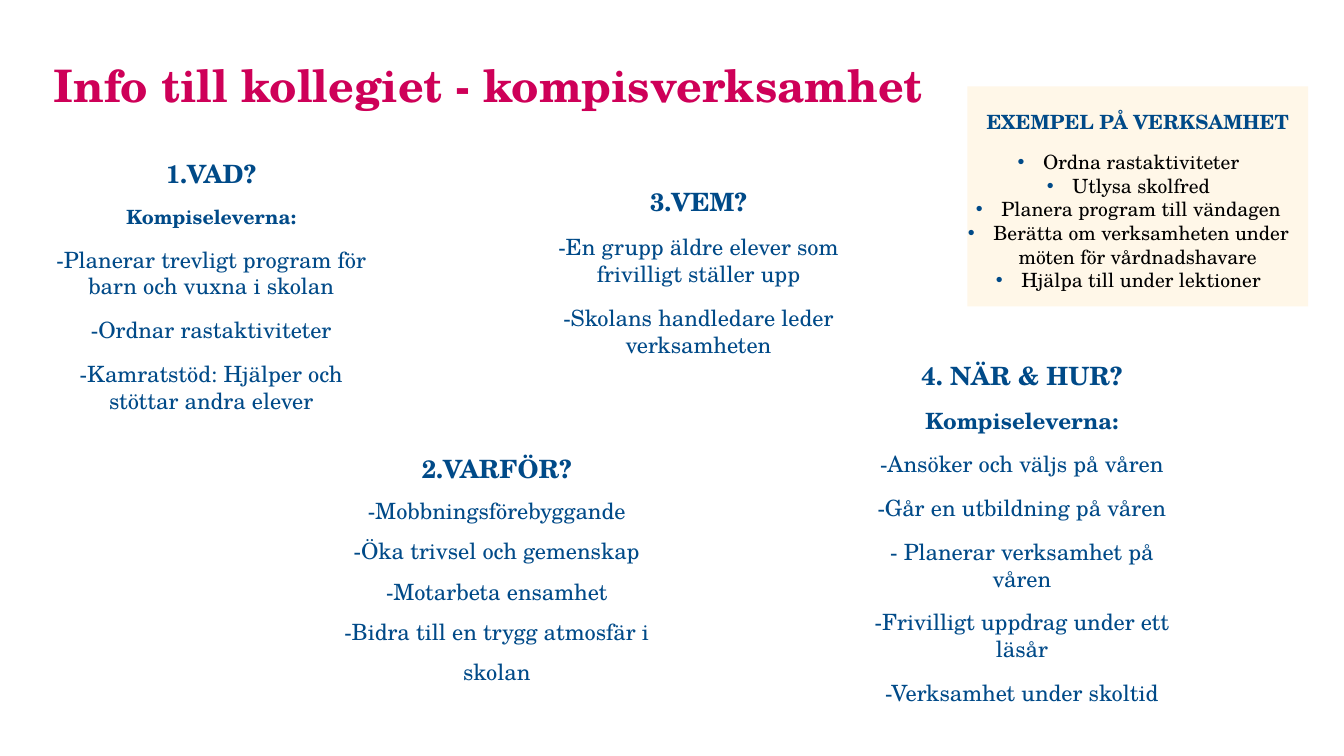
import pptx
import pptx.util
import pptx.dml.color
import pptx.enum.shapes
import pptx.enum.text
import lxml.etree

Cm, Pt = pptx.util.Cm, pptx.util.Pt
ALIGN = pptx.enum.text.PP_ALIGN
FONT = "TeX Gyre Schola"
BLUE, PINK, BLACK, WHITE, CREAM = "004A88", "CE0058", "000000", "FFFFFF", "FFF7E8"

TITLE = "Info till kollegiet - kompisverksamhet"
TITLE_AT = (1.35, 1.6, 32.51, 1.8)

# Each style: size, bold, colour, line spacing, space after, bullet
STYLES = {
    "head": (18, True, BLUE, 1, 12, False),
    "sub": (16, True, BLUE, 1, 12, False),
    "minor": (14, True, BLUE, 1, 12, False),
    "item": (16, False, BLUE, 1, 12, False),
    "wide head": (18, True, BLUE, 1.5, 0, False),
    "wide item": (16, False, BLUE, 1.5, 0, False),
    "label": (14, True, BLUE, 2, 12, False),
    "bullet": (14, False, BLACK, 1, 0, True),
}

WHAT = ((1.35, 3.99, 7.95, 8.81), WHITE, [
    ("head", ["1.VAD?"]),
    ("minor", ["Kompiseleverna:"]),
    ("item", ["-Planerar trevligt program för barn och vuxna i skolan",
              "-Ordnar rastaktiviteter",
              "-Kamratstöd: Hjälper och stöttar andra elever"]),
])

BOXES = [
    ((13.82, 4.7, 7.57, 5.54), WHITE, [
        ("head", ["3.VEM?"]),
        ("item", ["-En grupp äldre elever som frivilligt ställer upp",
                  "-Skolans handledare leder verksamheten"]),
    ]),
    ((21.97, 9.07, 7.57, 9.37), WHITE, [
        ("head", ["4. NÄR & HUR?"]),
        ("sub", ["Kompiseleverna:"]),
        ("item", ["-Ansöker och väljs på våren",
                  "-Går en utbildning på våren",
                  "- Planerar verksamhet på våren",
                  "-Frivilligt uppdrag under ett läsår",
                  "-Verksamhet under skoltid"]),
    ]),
    ((24.38, 2.18, 8.59, 5.54), CREAM, [
        ("label", ["EXEMPEL PÅ VERKSAMHET"]),
        ("bullet", ["Ordna rastaktiviteter",
                    "Utlysa skolfred",
                    "Planera program till vändagen",
                    "Berätta om verksamheten under möten för vårdnadshavare",
                    "Hjälpa till under lektioner"]),
    ]),
    ((8.61, 11.05, 7.82, 8), WHITE, [
        ("wide head", ["2.VARFÖR?"]),
        ("wide item", ["-Mobbningsförebyggande",
                       "-Öka trivsel och gemenskap",
                       "-Motarbeta ensamhet",
                       "-Bidra till en trygg atmosfär i skolan"]),
    ]),
]


def color(code):
    return pptx.dml.color.RGBColor.from_string(code)


def place(shape, at):
    """Move the shape and clear its text margins."""
    shape.left, shape.top, shape.width, shape.height = map(Cm, at)
    frame = shape.text_frame
    frame.word_wrap = True
    frame.auto_size = pptx.enum.text.MSO_AUTO_SIZE.NONE
    frame.vertical_anchor = pptx.enum.text.MSO_ANCHOR.TOP
    frame.margin_left = frame.margin_right = 0
    frame.margin_top = frame.margin_bottom = 0


def write(para, text, size, bold, tint):
    run = para.add_run()
    run.text = text
    run.font.name = FONT
    run.font.size = Pt(size)
    run.font.bold = bold
    run.font.color.rgb = color(tint)


def mark(para, bullet):
    """Set the bullet, or switch off the inherited one."""
    props = para._p.get_or_add_pPr()
    props.set("marL", "0")
    props.set("indent", str(-Cm(0.64)) if bullet else "0")

    def add(parent, tag, **attrs):
        name = pptx.oxml.ns.qn("a:" + tag)
        return lxml.etree.SubElement(parent, name, **attrs)

    if bullet:
        add(add(props, "buClr"), "srgbClr", val=BLUE)
        add(props, "buFont", typeface="Arial")
        add(props, "buChar", char="•")
    else:
        add(props, "buNone")


def fill(shape, at, back, groups):
    place(shape, at)
    shape.fill.solid()
    shape.fill.fore_color.rgb = color(back)
    frame = shape.text_frame
    lines = [(style, text) for style, texts in groups for text in texts]
    for i, (style, text) in enumerate(lines):
        size, bold, tint, gap, after, bullet = STYLES[style]
        para = frame.add_paragraph() if i else frame.paragraphs[0]
        para.alignment = ALIGN.CENTER
        para.line_spacing = float(gap)
        para.space_before = Pt(0)
        para.space_after = Pt(after)
        mark(para, bullet)
        write(para, text, size, bold, tint)


def main():
    deck = pptx.Presentation()
    deck.slide_width, deck.slide_height = Cm(33.87), Cm(19.05)
    slide = deck.slides.add_slide(deck.slide_layouts[1])

    title = slide.shapes.title
    place(title, TITLE_AT)
    para = title.text_frame.paragraphs[0]
    para.alignment = ALIGN.LEFT
    para.line_spacing = 0.9
    write(para, TITLE, 32, True, PINK)

    fill(slide.placeholders[1], *WHAT)
    for at, back, groups in BOXES:
        kind = pptx.enum.shapes.MSO_SHAPE.RECTANGLE
        box = slide.shapes.add_shape(kind, *map(Cm, at))
        box.shadow.inherit = False
        box.line.fill.background()
        fill(box, at, back, groups)

    deck.save("out.pptx")


if __name__ == "__main__":
    main()
